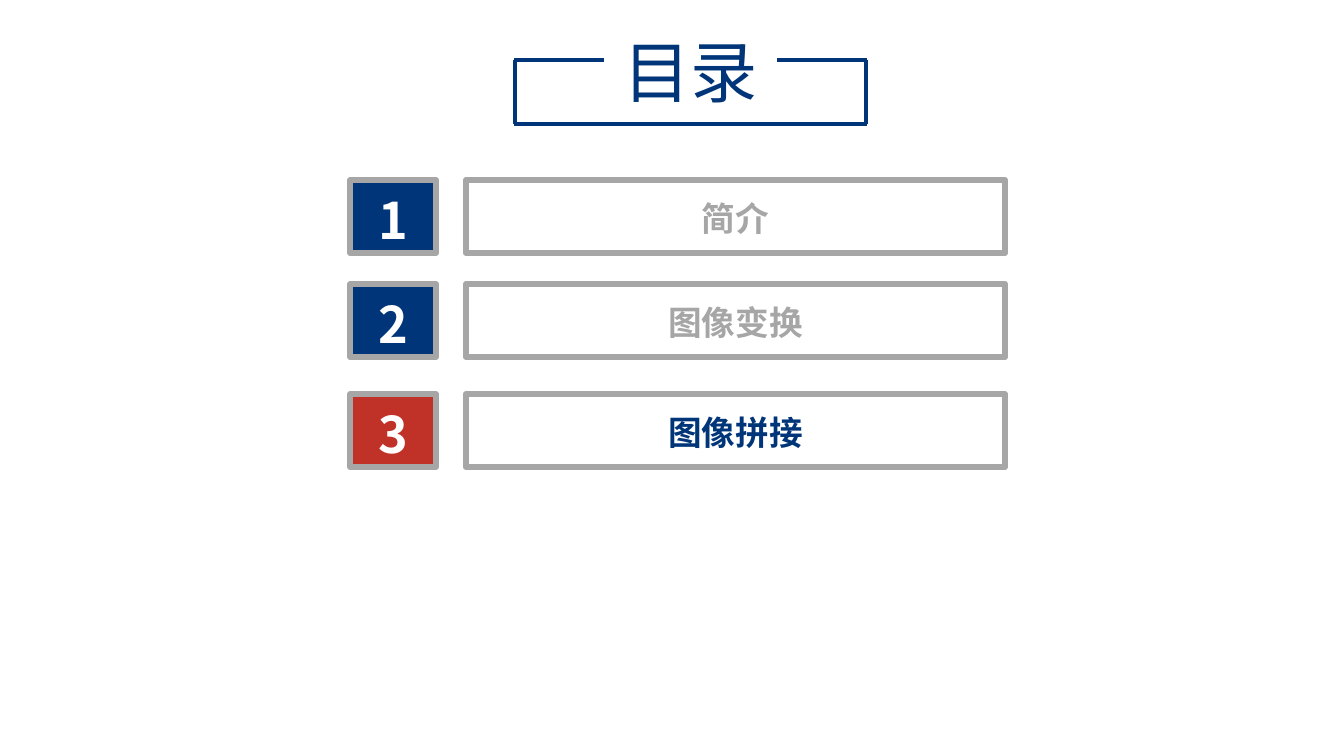
from lxml import etree
from pptx import Presentation
from pptx import util as u
from pptx.dml.color import RGBColor
from pptx.enum import shapes, text
from pptx.oxml.ns import qn

TITLE = "目录"
SECTIONS = [
    ("1", "简介", 180, False),
    ("2", "图像变换", 284, False),
    ("3", "图像拼接", 394, True),
]
COLORS = {"navy": "003679", "red": "C03228", "gray": "A6A6A6", "white": "FFFFFF"}
FONT = "Noto Sans CJK SC"

PX = 914400 / 100.8
SLIDE_SIZE = (1344, 756)
TITLE_BOX = (588, 25, 206, 92)
FRAME_LEFT, FRAME_TOP, FRAME_RIGHT, FRAME_BOTTOM = 514, 60, 867, 124
FRAME_ARM = 90
ROW_HEIGHT = 73
NUMBER_LEFT, NUMBER_WIDTH = 350, 86
LABEL_LEFT, LABEL_WIDTH = 466, 539
LABEL_INSET = 10


def emu(*lengths):
    return [u.Emu(round(length * PX)) for length in lengths]


def rgb(name):
    return RGBColor.from_string(COLORS[name])


def write(box, words, size, color, bold=False, spacing=None):
    frame = box.text_frame
    frame.word_wrap = True
    frame.auto_size = text.MSO_AUTO_SIZE.NONE
    frame.vertical_anchor = text.MSO_ANCHOR.MIDDLE
    frame.margin_top = frame.margin_bottom = 0
    para = frame.paragraphs[0]
    para.text = words
    para.alignment = text.PP_ALIGN.CENTER
    if spacing:
        para.line_spacing = spacing
    para.font.size = u.Pt(size)
    para.font.bold = bold
    para.font.color.rgb = rgb(color)
    para.font.name = FONT
    defaults = para._p.pPr.find(qn("a:defRPr"))
    etree.SubElement(defaults, qn("a:ea"), typeface=FONT)


def add_text(page, place, *style):
    write(page.shapes.add_textbox(*emu(*place)), *style)


def add_box(page, place, line_width, fill=None):
    box = page.shapes.add_shape(shapes.MSO_SHAPE.RECTANGLE, *emu(*place))
    box.shadow.inherit = False
    if fill:
        box.fill.solid()
        box.fill.fore_color.rgb = rgb(fill)
    else:
        box.fill.background()
    box.line.color.rgb = rgb("gray")
    box.line.width = u.Pt(line_width)
    return box


def add_line(page, ends):
    line = page.shapes.add_connector(shapes.MSO_CONNECTOR.STRAIGHT, *emu(*ends))
    line.line.color.rgb = rgb("navy")
    line.line.width = u.Pt(3)
    etree.SubElement(line._element.spPr, qn("a:effectLst"))


def add_title(page):
    add_text(page, TITLE_BOX, TITLE, 48, "navy")
    for start, end in ((FRAME_LEFT, FRAME_LEFT + FRAME_ARM),
                       (FRAME_RIGHT - FRAME_ARM, FRAME_RIGHT)):
        add_line(page, (start, FRAME_TOP, end, FRAME_TOP))
    add_line(page, (FRAME_LEFT, FRAME_BOTTOM, FRAME_RIGHT, FRAME_BOTTOM))
    for x in (FRAME_LEFT + 1, FRAME_RIGHT - 1):
        add_line(page, (x, FRAME_TOP, x, FRAME_BOTTOM))


def add_section(page, number, label, top, current):
    number_place = (NUMBER_LEFT, top, NUMBER_WIDTH, ROW_HEIGHT)
    number_box = add_box(page, number_place, 4, "red" if current else "navy")
    write(number_box, number, 36, "white", True, 1.1)
    add_box(page, (LABEL_LEFT, top, LABEL_WIDTH, ROW_HEIGHT), 4.5)
    label_place = (LABEL_LEFT, top + LABEL_INSET, LABEL_WIDTH, ROW_HEIGHT - 2 * LABEL_INSET)
    add_text(page, label_place, label, 24, "navy" if current else "gray", True, 1.1)


def main():
    deck = Presentation()
    deck.slide_width, deck.slide_height = emu(*SLIDE_SIZE)
    page = deck.slides.add_slide(deck.slide_layouts[6])
    add_title(page)
    for section in SECTIONS:
        add_section(page, *section)
    deck.save("out.pptx")


if __name__ == "__main__":
    main()
